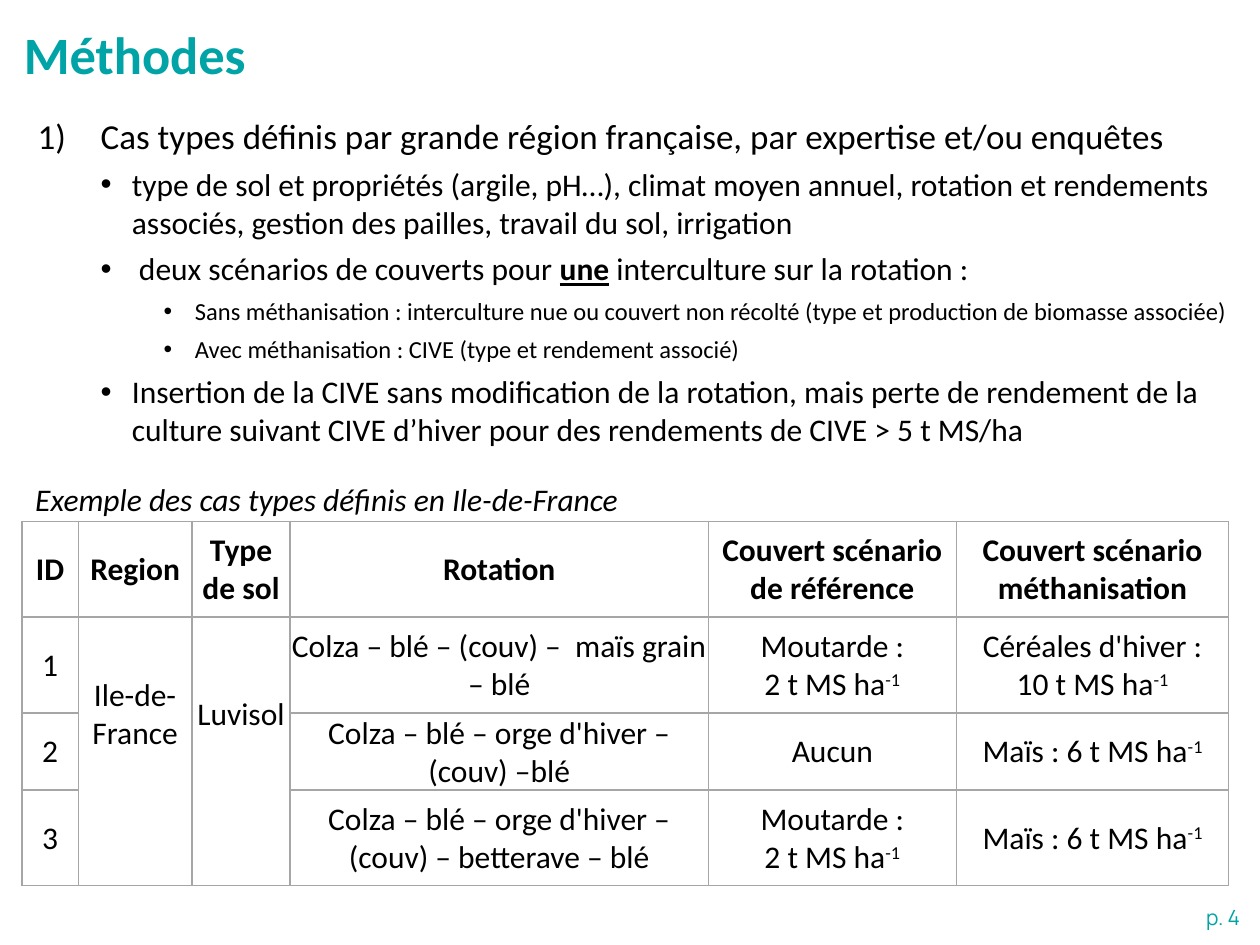
from dataclasses import dataclass

from lxml.etree import SubElement
from pptx import Presentation
from pptx.dml.color import RGBColor
from pptx.enum.text import MSO_ANCHOR as Anchor, PP_ALIGN as Align
from pptx.oxml.ns import qn
from pptx.util import Cm, Pt

COLORS = {"teal": "00A3A6", "black": "000000", "white": "FFFFFF", "grid": "A6A6A6"}


@dataclass
class Span:
    text: str
    bold: bool = False
    italic: bool = False
    underline: bool = False
    superscript: bool = False


@dataclass
class Level:
    size: int
    indent: float
    hanging: float
    before: int
    bullet: str


@dataclass
class Item:
    level: Level
    spans: list[Span]


def color(name: str) -> RGBColor:
    return RGBColor.from_string(COLORS[name])


def write(para, spans: list[Span], *, size: int, font: str = "Calibri",
          ink: str = "black", align=Align.LEFT) -> None:
    """Fill a paragraph with formatted spans."""
    para.alignment = align
    for span in spans:
        run = para.add_run()
        run.text = span.text
        run.font.name, run.font.size = font, Pt(size)
        run.font.color.rgb = color(ink)
        run.font.bold, run.font.italic = span.bold, span.italic
        run.font.underline = span.underline
        if span.superscript:
            run.font._element.set("baseline", "30000")


def add_box(page, left: float, top: float, width: float, height: float):
    box = page.shapes.add_textbox(Cm(left), Cm(top), Cm(width), Cm(height))
    box.text_frame.word_wrap = True
    return box.text_frame


def set_bullet(para, level: Level) -> None:
    props = para._p.get_or_add_pPr()
    props.set("marL", str(Cm(level.indent)))
    props.set("indent", str(-Cm(level.hanging)))
    if level.bullet == "1)":
        SubElement(props, qn("a:buFont"), typeface="+mj-lt")
        SubElement(props, qn("a:buAutoNum"), type="arabicParenR")
    else:
        SubElement(props, qn("a:buFont"), typeface="Arial")
        SubElement(props, qn("a:buChar"), char=level.bullet)


def add_list(frame, items: list[Item]) -> None:
    for number, item in enumerate(items):
        para = frame.add_paragraph() if number else frame.paragraphs[0]
        if number:
            para.space_before = Pt(item.level.before)
        set_bullet(para, item.level)
        write(para, item.spans, size=item.level.size)


def set_borders(cell) -> None:
    props = cell._tc.get_or_add_tcPr()
    for place, side in enumerate(("lnL", "lnR", "lnT", "lnB")):
        line = props.makeelement(qn(f"a:{side}"), {"w": str(Pt(1))})
        fill = SubElement(line, qn("a:solidFill"))
        SubElement(fill, qn("a:srgbClr"), val=COLORS["grid"])
        props.insert(place, line)


def fill_cell(cell, spans: list[Span], bottom: float = 0) -> None:
    cell.fill.solid()
    cell.fill.fore_color.rgb = color("white")
    set_borders(cell)
    cell.vertical_anchor = Anchor.MIDDLE
    cell.margin_left = cell.margin_right = cell.margin_top = Cm(0.03)
    cell.margin_bottom = Cm(bottom)
    write(cell.text_frame.paragraphs[0], spans, size=18, align=Align.CENTER)


def per_hectare(text: str) -> list[Span]:
    return [Span(text + " t MS ha".replace(" ", NBSP)), Span("-1", superscript=True)]


NBSP = chr(160)
POINT = Level(20, 1.27, 1.27, 10, "1)")
DETAIL = Level(18, 1.9, 0.63, 5, "•")
CASE = Level(14, 3.17, 0.63, 5, "•")

ITEMS = [
    Item(POINT, [Span("Cas types définis par grande région française, par expertise "
                      "et/ou enquêtes")]),
    Item(DETAIL, [Span("type de sol et propriétés (argile, pH…), climat moyen annuel, "
                       "rotation et rendements associés, gestion des pailles, travail "
                       "du sol, irrigation")]),
    Item(DETAIL, [Span(" deux scénarios de couverts pour "),
                  Span("une", bold=True, underline=True),
                  Span(" interculture sur la rotation :")]),
    Item(CASE, [Span("Sans méthanisation : interculture nue ou couvert non récolté "
                     "(type et production de biomasse associée)")]),
    Item(CASE, [Span("Avec méthanisation : CIVE (type et rendement associé)")]),
    Item(DETAIL, [Span("Insertion de la CIVE sans modification de la rotation, mais "
                       "perte de rendement de la culture suivant CIVE d’hiver pour des "
                       "rendements de CIVE > 5 t MS/ha")]),
]

HEADERS = ["ID", "Region", "Type de sol", "Rotation",
           "Couvert scénario de référence", "Couvert scénario méthanisation"]
MUSTARD = per_hectare(f"Moutarde : 2")
MAIZE = per_hectare("Maïs : 6")
ROTATIONS = [
    ("Colza – blé – (couv) –  maïs grain – blé", MUSTARD,
     per_hectare("Céréales d'hiver : 10")),
    ("Colza – blé – orge d'hiver – (couv) –blé", [Span("Aucun")], MAIZE),
    ("Colza – blé – orge d'hiver – (couv) – betterave – blé", MUSTARD, MAIZE),
]
SHARED = {1: "Ile-de-France", 2: "Luvisol"}
COLUMN_WIDTHS = [1.14, 2.29, 1.98, 8.43, 5.0, 5.49]
ROW_HEIGHTS = [1.93, 1.93, 1.55, 1.93]


def add_cases_table(page) -> None:
    frame = page.shapes.add_table(len(ROW_HEIGHTS), len(COLUMN_WIDTHS), Cm(0.44), Cm(10.51),
                                  Cm(sum(COLUMN_WIDTHS)), Cm(sum(ROW_HEIGHTS)))
    table = frame.table
    for column, width in zip(table.columns, COLUMN_WIDTHS):
        column.width = Cm(width)
    for row, height in zip(table.rows, ROW_HEIGHTS):
        row.height = Cm(height)

    for index, header in enumerate(HEADERS):
        fill_cell(table.cell(0, index), [Span(header, bold=True)])
    for number, (rotation, reference, methane) in enumerate(ROTATIONS, start=1):
        values = {0: [Span(str(number))], 3: [Span(rotation)], 4: reference, 5: methane}
        for index, spans in values.items():
            fill_cell(table.cell(number, index), spans)

    # Region and soil are shared by all rotations and sit above the middle
    for index, text in SHARED.items():
        for number in range(2, len(ROW_HEIGHTS)):
            set_borders(table.cell(number, index))
        table.cell(1, index).merge(table.cell(len(ROTATIONS), index))
        fill_cell(table.cell(1, index), [Span(text)], bottom=1.52)


def main() -> None:
    deck = Presentation()
    deck.slide_width, deck.slide_height = Cm(25.4), Cm(19.05)
    page = deck.slides.add_slide(deck.slide_layouts[5])

    # Title
    title = page.shapes.title
    title.left, title.top, title.width, title.height = Cm(0.48), Cm(0.2), Cm(24.49), Cm(1.9)
    title.text_frame.margin_left = 0
    title.text_frame.vertical_anchor = Anchor.MIDDLE
    title.text_frame.paragraphs[0].line_spacing = 0.9
    write(title.text_frame.paragraphs[0], [Span("Méthodes", bold=True)], size=30, ink="teal")

    # Method list
    add_list(add_box(page, 0.51, 2.18, 24.51, 16.64), ITEMS)

    # Example table with its caption
    add_cases_table(page)
    caption = add_box(page, 0.46, 9.55, 14.99, 1.02)
    write(caption.paragraphs[0],
          [Span("Exemple des cas types définis en Ile-de-France", italic=True)], size=18)

    # Page number
    footer = add_box(page, 19.46, 18.11, 5.79, 0.76)
    write(footer.paragraphs[0], [Span("p. 4")], size=12, font="Manrope", ink="teal",
          align=Align.RIGHT)

    deck.save("out.pptx")


if __name__ == "__main__":
    main()
